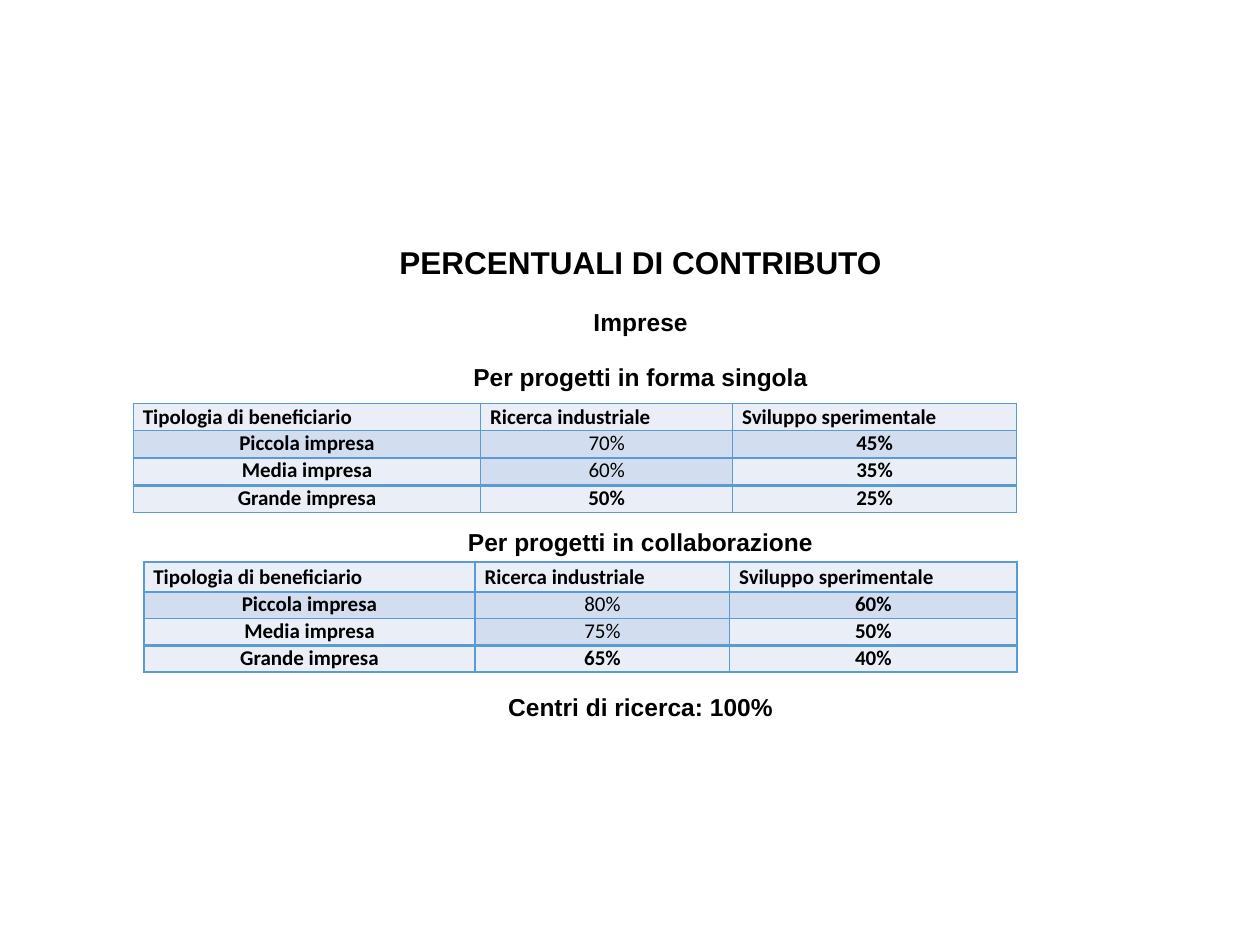
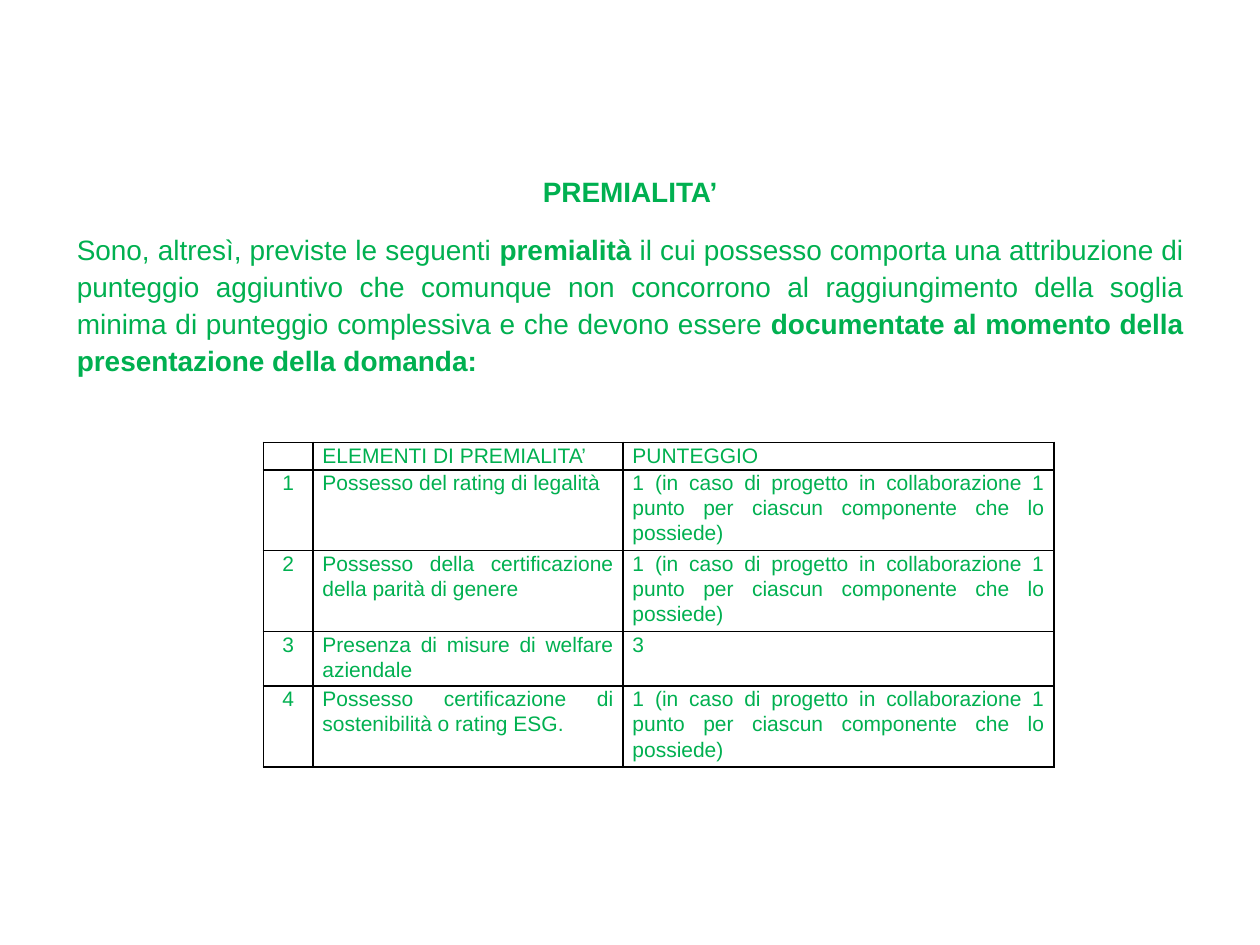
from lxml.etree import SubElement as Sub
from pptx import Presentation
from pptx.dml.color import RGBColor as Rgb
from pptx.enum.text import MSO_ANCHOR as Anchor, PP_ALIGN as Align
from pptx.oxml.ns import qn
from pptx.util import Cm, Pt

COLORS = {"text": "000000", "green": "00B050", "blue": "5B9BD5",
          "pale": "EAEFF7", "band": "D2DEEF"}
HEAD = ["Tipologia di beneficiario", "Ricerca industriale", "Sviluppo sperimentale"]
FIRMS = ["Piccola impresa", "Media impresa", "Grande impresa"]
POINT = ("1 (in caso di progetto in collaborazione 1 punto per ciascun "
         "componente che lo possiede)")
AWARDS = [("Possesso del rating di legalità", POINT),
          ("Possesso della certificazione della parità di genere", POINT),
          ("Presenza di misure di welfare aziendale", "3"),
          ("Possesso certificazione di sostenibilità o rating ESG.", POINT)]
INTRO = ["Sono, altresì, previste le seguenti ", "premialità",
         " il cui possesso comporta una attribuzione di punteggio aggiuntivo che "
         "comunque non concorrono al raggiungimento della soglia minima di punteggio "
         "complessiva e che devono essere ",
         "documentate al momento della presentazione della domanda:"]


def style(par, size, color, face="Arial", bold=False, align=Align.CENTER):
    """Set font and alignment of a paragraph."""
    par.alignment = align
    font = par.font
    font.name, font.size, font.bold = face, Pt(size), bold
    font.color.rgb = Rgb.from_string(COLORS[color])


def space(par, line, before=0, after=0):
    """Set the spacing of a paragraph."""
    par.line_spacing = line
    par.space_before, par.space_after = Pt(before), Pt(after)


def add_box(slide, left, top, width, height):
    """Add a wrapping text box and return its frame."""
    frame = slide.shapes.add_textbox(Cm(left), Cm(top), Cm(width), Cm(height)).text_frame
    frame.word_wrap = True
    return frame


def add_edges(cell, color, top=1, bottom=1):
    """Draw the four borders of a cell."""
    props = cell._tc.get_or_add_tcPr()
    for side, width in zip("LRTB", (1, 1, top, bottom)):
        line = Sub(props, qn(f"a:ln{side}"), w=str(Pt(width)))
        fill = Sub(line, qn("a:solidFill"))
        Sub(fill, qn("a:srgbClr"), val=COLORS[color])


def add_grid(slide, left, top, cols, rows, data):
    """Add a plain table and yield each cell with its row and column."""
    frame = slide.shapes.add_table(len(rows), len(cols), Cm(left), Cm(top),
                                   Cm(sum(cols)), Cm(sum(rows)))
    table = frame.table
    table.first_row = table.horz_banding = False
    for col, width in zip(table.columns, cols):
        col.width = Cm(width)
    for row, height in zip(table.rows, rows):
        row.height = Cm(height)
    for r, texts in enumerate(data):
        for c, text in enumerate(texts):
            cell = table.cell(r, c)
            cell.margin_left = cell.margin_right = Cm(0.19)
            cell.margin_top = cell.margin_bottom = 0
            cell.text = text
            yield r, c, cell


def add_rates(slide, left, top, cols, rows, rates):
    """Add a table of grant rates by type of firm."""
    data = [HEAD] + [[firm, *pair] for firm, pair in zip(FIRMS, rates)]
    for r, c, cell in add_grid(slide, left, top, cols, rows, data):
        light = c == 1 and r in (1, 2)
        style(cell.text_frame.paragraphs[0], 12, "text", "Calibri", not light,
              Align.CENTER if r else Align.JUSTIFY)
        if r == 0:
            cell.vertical_anchor = Anchor.MIDDLE
        add_edges(cell, "blue", 2 if r == 3 else 1, 2 if r == 2 else 1)
        cell.fill.solid()
        shade = "band" if r == 1 or light else "pale"
        cell.fill.fore_color.rgb = Rgb.from_string(COLORS[shade])


def add_awards(slide):
    """Add the table of award points."""
    data = [("", "ELEMENTI DI PREMIALITA’", "PUNTEGGIO")]
    data += [(str(n), *award) for n, award in enumerate(AWARDS, 1)]
    rows = [0.55, 1.63, 1.63, 1.1, 1.63]
    for r, c, cell in add_grid(slide, 5.31, 8.92, [1, 6.25, 8.69], rows, data):
        par = cell.text_frame.paragraphs[0]
        style(par, 12, "green", align=Align.JUSTIFY if c else Align.CENTER)
        space(par, 1.07)
        if not cell.text:
            par._p.get_or_add_endParaRPr().set("sz", "1200")
        add_edges(cell, "text")
        cell.fill.background()


def add_shares(slide):
    """Fill the slide on grant percentages."""
    frame = add_box(slide, 2.31, 4.93, 21.21, 12.4)
    lines = [("PERCENTUALI DI CONTRIBUTO", 18, 0), ("Imprese", 14, 12),
             ("Per progetti in forma singola", 14, 12),
             ("Per progetti in collaborazione", 14, 75),
             ("Centri di ricerca: 100%", 14, 75)]
    for i, (text, size, before) in enumerate(lines):
        par = frame.add_paragraph() if i else frame.paragraphs[0]
        par.text = text
        style(par, size, "text", bold=True)
        space(par, 0.8, before, 6)
    add_rates(slide, 2.69, 8.13, [7, 5.08, 5.72], [0.55] * 4,
              [("70%", "45%"), ("60%", "35%"), ("50%", "25%")])
    add_rates(slide, 2.9, 11.33, [6.68, 5.13, 5.79], [0.6] + [0.54] * 3,
              [("80%", "60%"), ("75%", "50%"), ("65%", "40%")])


def add_bonus(slide):
    """Fill the slide on awards."""
    frame = add_box(slide, 1.3, 3.53, 22.81, 8.81)
    title = frame.paragraphs[0]
    title.text = "PREMIALITA’"
    style(title, 16, "green", bold=True)
    space(title, 0.8, 0, 12)
    body = frame.add_paragraph()
    style(body, 16, "green", align=Align.JUSTIFY)
    space(body, 1.1, 0, 6)
    for i, text in enumerate(INTRO):
        run = body.add_run()
        run.text = text
        run.font.bold = i % 2 == 1
    add_awards(slide)


def main():
    """Build and save the deck."""
    deck = Presentation()
    deck.slide_width, deck.slide_height = Cm(25.4), Cm(19.05)
    for build in (add_shares, add_bonus):
        build(deck.slides.add_slide(deck.slide_layouts[6]))
    deck.save("out.pptx")


if __name__ == "__main__":
    main()
